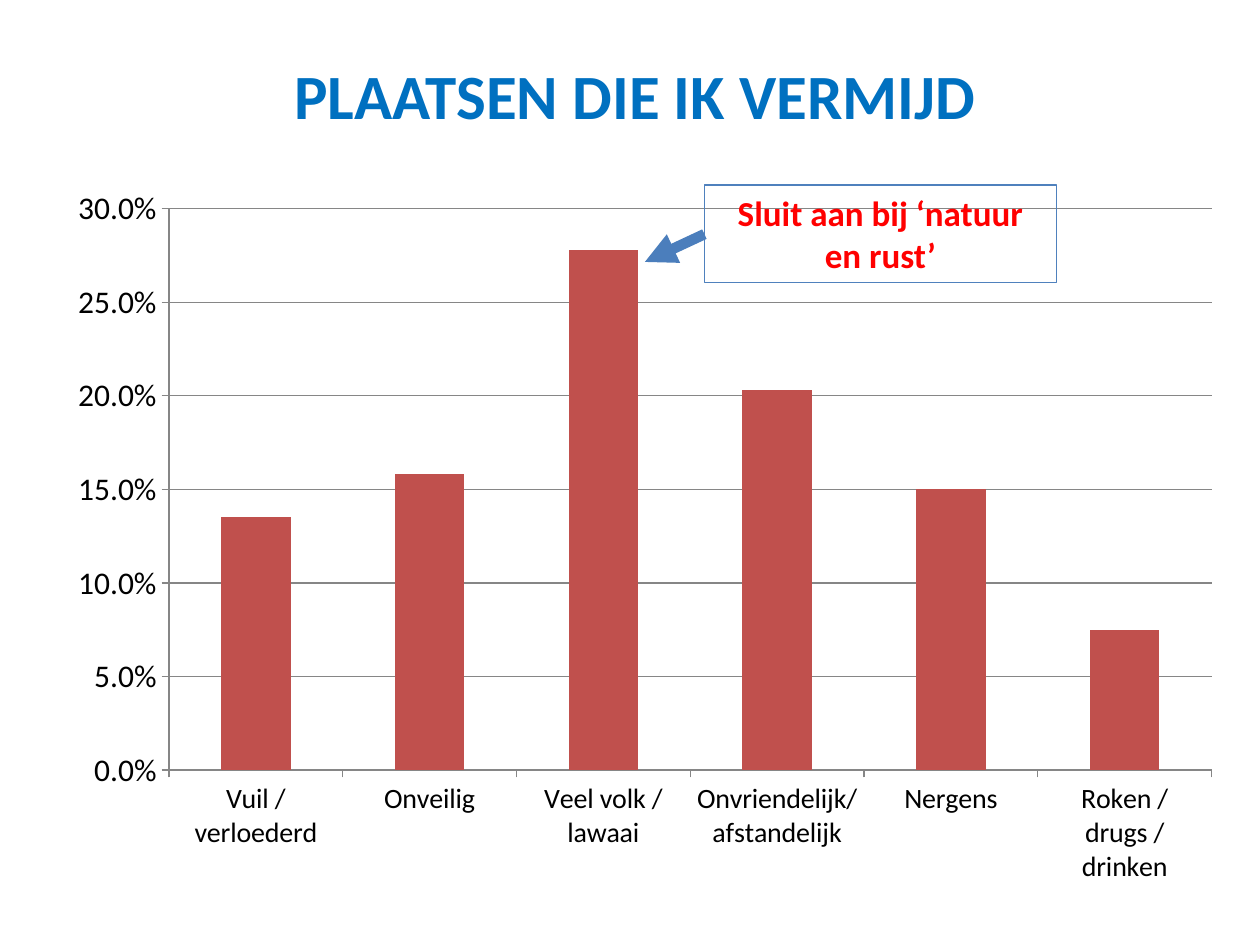
from lxml import etree
from pptx import Presentation
from pptx import util as u
from pptx.chart import data
from pptx.dml import color
from pptx.enum import chart as ch, shapes, text
from pptx.oxml import ns

FONT = "Calibri"
COLORS = {
    "title": "0070C0",
    "note": "FF0000",
    "note_line": "4F81BD",
    "arrow": "4B7EBC",
    "bar": "C0504D",
    "axis": "868686",
    "text": "000000",
}
PLACES = {
    "Vuil / verloederd": 0.135,
    "Onveilig": 0.158,
    "Veel volk / lawaai": 0.278,
    "Onvriendelijk/afstandelijk": 0.203,
    "Nergens": 0.15,
    "Roken / drugs / drinken": 0.075,
}


def rgb(name):
    return color.RGBColor.from_string(COLORS[name])


def set_font(font, size, name, bold=False):
    font.name = FONT
    font.size = u.Pt(size)
    font.bold = bold
    font.color.rgb = rgb(name)


def set_line(line, name, width):
    line.color.rgb = rgb(name)
    line.width = u.Pt(width)


def add_label(s, box, wording, size, name):
    sp = s.shapes.add_textbox(*map(u.Cm, box))
    tf = sp.text_frame
    tf.word_wrap = True
    tf.text = wording
    p = tf.paragraphs[0]
    p.alignment = text.PP_ALIGN.CENTER
    set_font(p.runs[0].font, size, name, bold=True)
    return sp


def add_arrow(s, start, end):
    cx = s.shapes.add_connector(
        shapes.MSO_CONNECTOR.STRAIGHT, *map(u.Cm, start + end))
    set_line(cx.line, "arrow", 6)
    ln = cx.line._get_or_add_ln()
    etree.SubElement(ln, ns.qn("a:tailEnd"), type="triangle")
    etree.SubElement(cx._element.spPr, ns.qn("a:effectLst"))


def add_bar_chart(s, box):
    cd = data.CategoryChartData(number_format="0.0%")
    cd.categories = list(PLACES)
    cd.add_series("Series 1", list(PLACES.values()))
    chart = s.shapes.add_chart(
        ch.XL_CHART_TYPE.COLUMN_CLUSTERED, *map(u.Cm, box), cd).chart
    chart.has_legend = False
    chart.has_title = False
    set_font(chart.font, 18, "text")

    plot = chart.plots[0]
    plot.gap_width = 150
    plot.vary_by_categories = False
    fill = plot.series[0].format.fill
    fill.solid()
    fill.fore_color.rgb = rgb("bar")

    for axis, size in ((chart.category_axis, 16), (chart.value_axis, 18)):
        axis.major_tick_mark = ch.XL_TICK_MARK.OUTSIDE
        axis.minor_tick_mark = ch.XL_TICK_MARK.NONE
        set_line(axis.format.line, "axis", 0.75)
        set_font(axis.tick_labels.font, size, "text")

    values = chart.value_axis
    values.minimum_scale, values.maximum_scale = 0, 0.3
    values.major_unit = 0.05
    values.has_major_gridlines = True
    set_line(values.major_gridlines.format.line, "axis", 0.75)
    values.tick_labels.number_format = "0.0%"
    values.tick_labels.number_format_is_linked = False


def main():
    prs = Presentation()
    prs.slide_width, prs.slide_height = u.Cm(25.4), u.Cm(19.05)
    s = prs.slides.add_slide(prs.slide_layouts[6])
    add_label(s, (0.5, 1.02, 24.6, 1.8), "PLAATSEN DIE IK VERMIJD", 36, "title")
    add_bar_chart(s, (1.1, 3.53, 23.8, 14.6))
    note = add_label(
        s, (14.2, 3.73, 7.1, 1.96), "Sluit aan bij ‘natuur en rust’", 20, "note")
    set_line(note.line, "note_line", 0.75)
    add_arrow(s, (14.2, 4.72), (13, 5.28))
    prs.save("out.pptx")


if __name__ == "__main__":
    main()
